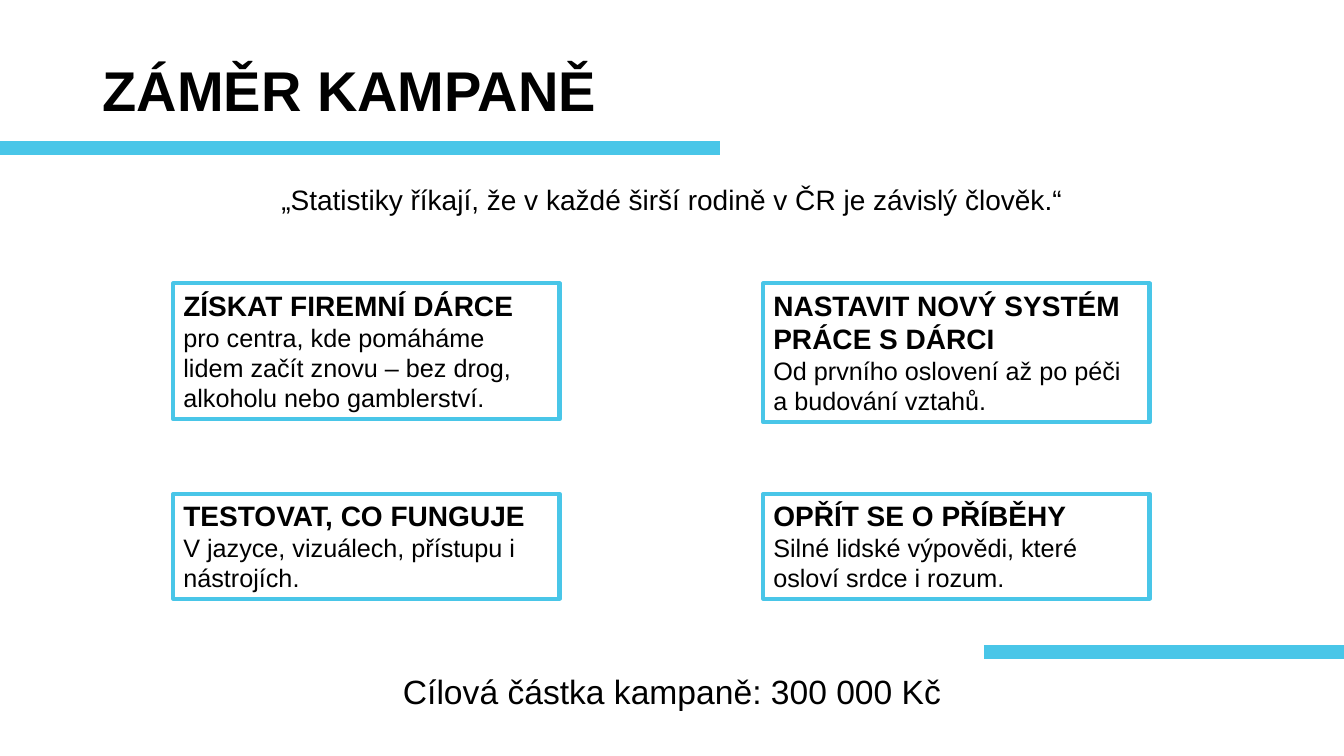
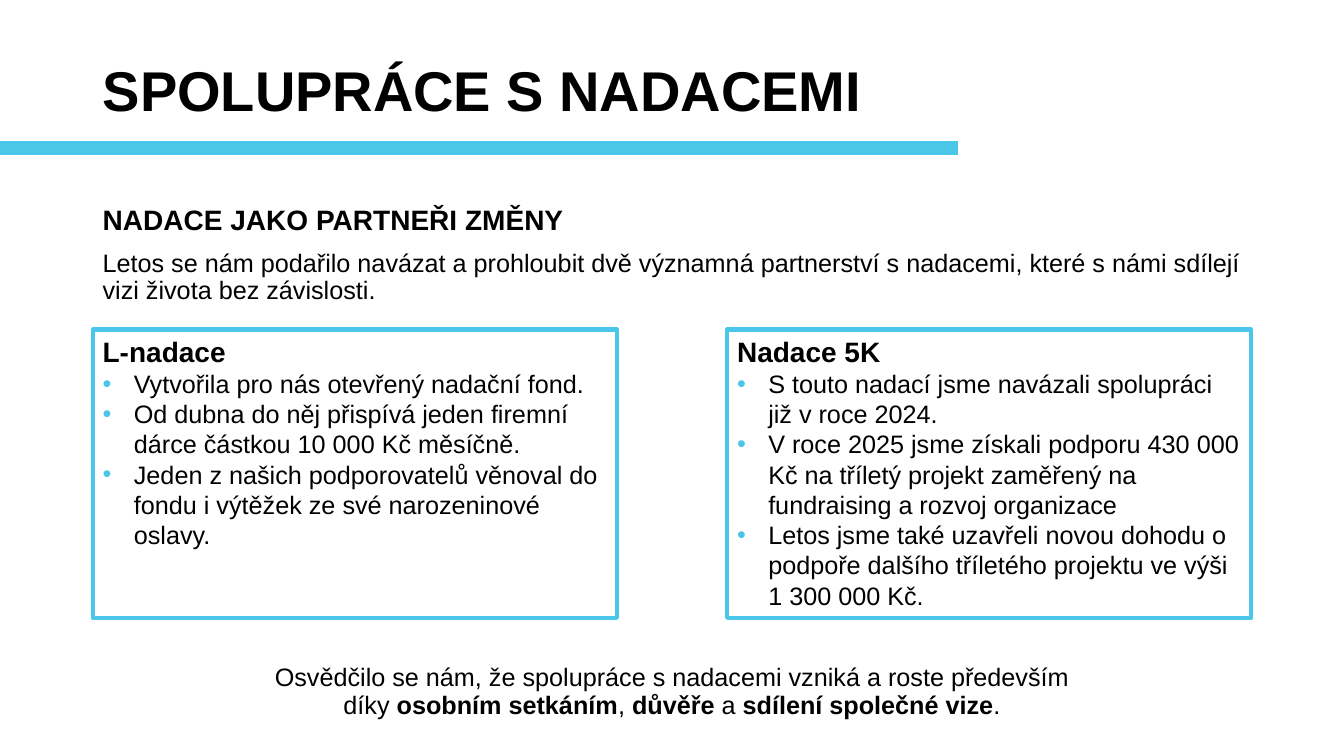
from dataclasses import dataclass

from lxml.etree import SubElement
from pptx import Presentation
from pptx.dml.color import RGBColor
from pptx.enum.shapes import MSO_CONNECTOR, MSO_SHAPE
from pptx.enum.text import MSO_ANCHOR, MSO_AUTO_SIZE, PP_ALIGN
from pptx.oxml.ns import qn
from pptx.util import Inches, Pt


@dataclass(frozen=True)
class Theme:
    accent: str = "49C6E8"
    ink: str = "000000"
    paper: str = "FFFFFF"
    font: str = "Arial"
    title: int = 40
    goal: int = 24
    heading: int = 20
    body: int = 18
    outline: int = 3
    band: int = 10
    paragraph_gap: int = 10
    bullet_indent: float = 0.31


class Deck:
    """Holds the style and the current slide; lengths are percent of the slide."""

    MARGIN = 6.9

    def __init__(self, theme):
        self.theme = theme
        self.prs = Presentation()
        self.prs.slide_width, self.prs.slide_height = Inches(13.33), Inches(7.5)
        self.slide = None

    def place(self, *shares):
        sides = (self.prs.slide_width, self.prs.slide_height) * 2
        return [int(side * share / 100) for side, share in zip(sides, shares)]

    def fill_paragraph(self, paragraph, runs, size, bold=False, align=PP_ALIGN.LEFT,
                       **spacing):
        """Fill a paragraph; runs alternate between plain and emphasised."""
        for name, value in {"alignment": align, **spacing}.items():
            setattr(paragraph, name, value)
        for index, text in enumerate(runs):
            run = paragraph.add_run()
            run.text = text
            style = {"name": self.theme.font, "size": Pt(size),
                     "bold": bold or index % 2 == 1}
            for name, value in style.items():
                setattr(run.font, name, value)
            run.font.color.rgb = RGBColor.from_string(self.theme.ink)

    def set_frame(self, frame, anchor=MSO_ANCHOR.TOP):
        settings = {"word_wrap": True, "auto_size": MSO_AUTO_SIZE.NONE,
                    "vertical_anchor": anchor}
        for name, value in settings.items():
            setattr(frame, name, value)
        return frame

    def new_slide(self, title, band_width):
        self.slide = self.prs.slides.add_slide(self.prs.slide_layouts[5])
        heading = self.slide.shapes.title
        box = self.place(self.MARGIN, 2.67, 100 - 2 * self.MARGIN, 19.33)
        for name, value in zip(("left", "top", "width", "height"), box):
            setattr(heading, name, value)
        frame = self.set_frame(heading.text_frame, MSO_ANCHOR.MIDDLE)
        self.fill_paragraph(frame.paragraphs[0], [title], self.theme.title, True,
                            line_spacing=0.9)
        self.band(0, band_width, 19.6)

    def band(self, start, end, y):
        line = self.slide.shapes.add_connector(
            MSO_CONNECTOR.STRAIGHT, *self.place(start, y, end, y))
        line.line.color.rgb = RGBColor.from_string(self.theme.accent)
        line.line.width = Pt(self.theme.band)
        SubElement(line._element.spPr, qn("a:effectLst"))

    def text(self, box, *paragraphs, align=PP_ALIGN.CENTER):
        """Each paragraph is (runs, size, bold)."""
        frame = self.set_frame(self.slide.shapes.add_textbox(*self.place(*box)).text_frame)
        for index, (runs, size, bold) in enumerate(paragraphs):
            paragraph = frame.add_paragraph() if index else frame.paragraphs[0]
            self.fill_paragraph(paragraph, runs, size, bold, align, line_spacing=0.9,
                                space_before=Pt(self.theme.paragraph_gap))

    def card(self, box, heading, lines, bulleted=False):
        card = self.slide.shapes.add_shape(MSO_SHAPE.RECTANGLE, *self.place(*box))
        card.shadow.inherit = False
        card.fill.solid()
        card.fill.fore_color.rgb = RGBColor.from_string(self.theme.paper)
        card.line.color.rgb = RGBColor.from_string(self.theme.accent)
        card.line.width = Pt(self.theme.outline)
        frame = self.set_frame(card.text_frame)
        self.fill_paragraph(frame.paragraphs[0], [heading], self.theme.heading, True)
        for line in lines:
            paragraph = frame.add_paragraph()
            self.fill_paragraph(paragraph, [line], self.theme.body)
            if bulleted:
                self.bullet(paragraph)

    def bullet(self, paragraph):
        props = paragraph._p.get_or_add_pPr()
        indent = Inches(self.theme.bullet_indent)
        props.set("marL", str(indent))
        props.set("indent", str(-indent))
        colour = SubElement(props, qn("a:buClr"))
        SubElement(colour, qn("a:srgbClr"), val=self.theme.accent)
        SubElement(props, qn("a:buFont"), typeface=self.theme.font)
        SubElement(props, qn("a:buChar"), char="•")


def campaign_slide(deck):
    theme = deck.theme
    deck.new_slide("ZÁMĚR KAMPANĚ", 53.6)
    deck.text((12.5, 24, 75, 6.5),
              (["„Statistiky říkají, že v každé širší rodině v ČR je závislý člověk.“"],
               theme.heading, False))

    # Four aims in two columns and two rows
    aims = [
        ("ZÍSKAT FIREMNÍ DÁRCE",
         "pro centra, kde pomáháme lidem začít znovu – bez drog, alkoholu nebo gamblerství.", 18),
        ("NASTAVIT NOVÝ SYSTÉM PRÁCE S DÁRCI",
         "Od prvního oslovení až po péči a budování vztahů.", 18.4),
        ("TESTOVAT, CO FUNGUJE", "V jazyce, vizuálech, přístupu i nástrojích.", 13.87),
        ("OPŘÍT SE O PŘÍBĚHY", "Silné lidské výpovědi, které osloví srdce i rozum.", 13.87),
    ]
    for index, (heading, detail, height) in enumerate(aims):
        row, column = divmod(index, 2)
        deck.card((12.9 + 43.9 * column, 37.47 + 27.87 * row, 28.73, height),
                  heading, [detail])

    # Target amount
    deck.band(73.2, 100, 86.27)
    deck.text((12.5, 88.67, 75, 6.5),
              (["Cílová částka kampaně: 300 000 Kč"], theme.goal, False))


def foundations_slide(deck):
    theme = deck.theme
    deck.new_slide("SPOLUPRÁCE S NADACEMI", 71.25)
    deck.text((deck.MARGIN, 26.67, 100 - 2 * deck.MARGIN, 16.13),
              (["NADACE JAKO PARTNEŘI ZMĚNY"], theme.heading, True),
              (["Letos se nám podařilo navázat a prohloubit dvě významná partnerství "
                "s nadacemi, které s námi sdílejí vizi života bez závislosti."],
               theme.body, False),
              align=PP_ALIGN.LEFT)

    # One card per foundation, flush with both margins
    foundations = {
        "L-nadace": [
            "Vytvořila pro nás otevřený nadační fond.",
            "Od dubna do něj přispívá jeden firemní dárce částkou 10 000 Kč měsíčně.",
            "Jeden z našich podporovatelů věnoval do fondu i výtěžek ze své narozeninové oslavy.",
        ],
        "Nadace 5K": [
            "S touto nadací jsme navázali spolupráci již v roce 2024.",
            "V roce 2025 jsme získali podporu 430 000 Kč na tříletý projekt "
            "zaměřený na fundraising a rozvoj organizace",
            "Letos jsme také uzavřeli novou dohodu o podpoře dalšího tříletého "
            "projektu ve výši 1 300 000 Kč.",
        ],
    }
    width = 39
    step = 100 - 2 * deck.MARGIN - width
    for column, (name, facts) in enumerate(foundations.items()):
        deck.card((deck.MARGIN + step * column, 43.6, width, 38.13),
                  name, facts, bulleted=True)

    # Closing thought
    deck.text((18.15, 87.33, 63.7, 11.47),
              (["Osvědčilo se nám, že spolupráce s nadacemi vzniká a roste především díky ",
                "osobním setkáním", ", ", "důvěře", " a ", "sdílení společné vize", "."],
               theme.body, False))


def main():
    deck = Deck(Theme())
    campaign_slide(deck)
    foundations_slide(deck)
    deck.prs.save("out.pptx")


if __name__ == "__main__":
    main()
